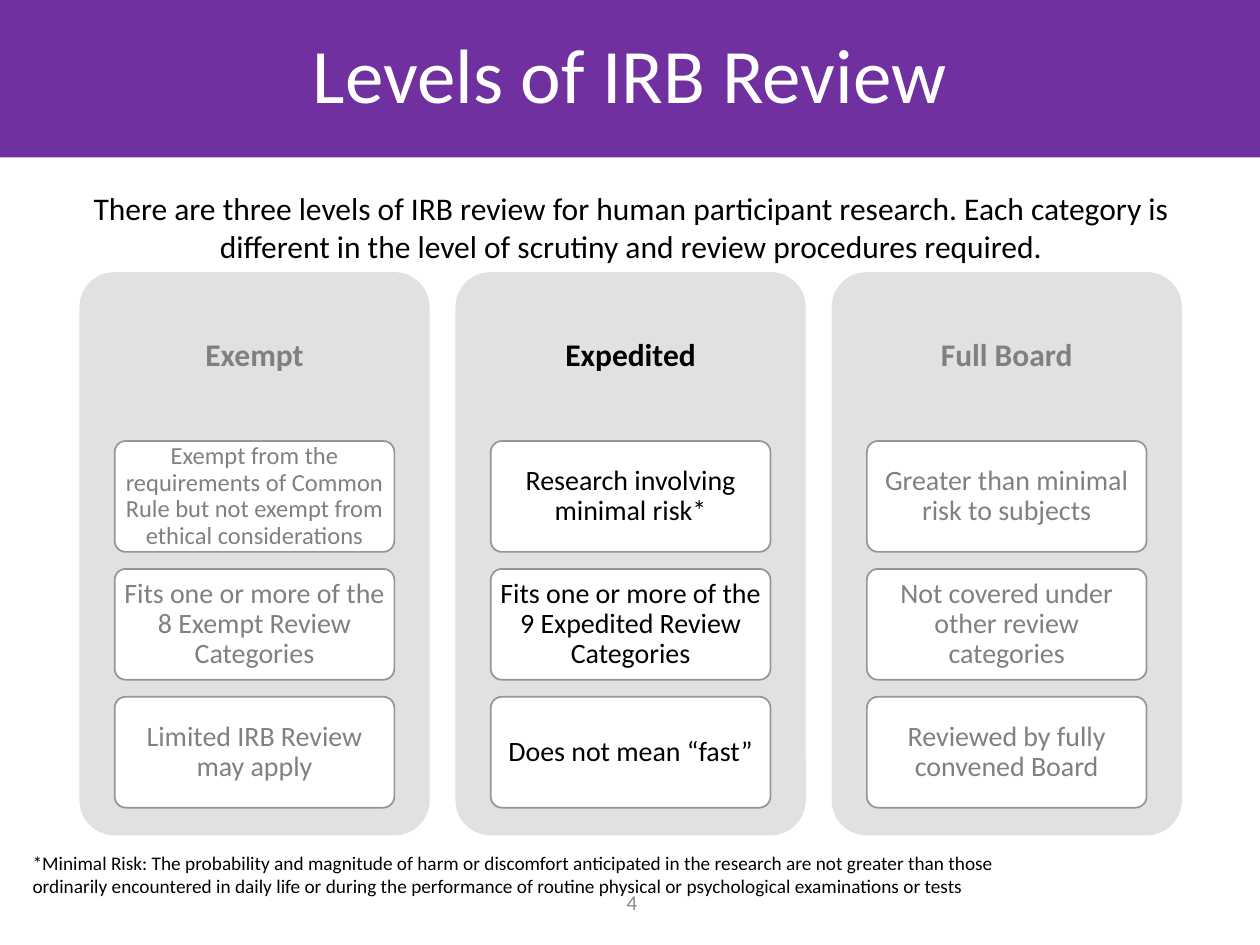
from pptx import Presentation
from pptx.dml.color import RGBColor
from pptx.enum.shapes import MSO_SHAPE
from pptx.enum.text import MSO_ANCHOR, PP_ALIGN
from pptx.util import Inches, Pt

ROUNDED = MSO_SHAPE.ROUNDED_RECTANGLE
LEFT, CENTER = PP_ALIGN.LEFT, PP_ALIGN.CENTER
TOP, MIDDLE = MSO_ANCHOR.TOP, MSO_ANCHOR.MIDDLE

FONT = "Calibri"
PURPLE, WHITE, BLACK = "7030A0", "FFFFFF", "000000"
PANEL_GRAY, OUTLINE_GRAY, MUTED, NUMBER_GRAY = "E1E1E1", "969696", "808080", "8C8C8C"

TITLE = "Levels of IRB Review"
INTRO = ("There are three levels of IRB review for human participant research. "
         "Each category is different in the level of scrutiny and review "
         "procedures required.")
FOOTNOTE = ("*Minimal Risk: The probability and magnitude of harm or discomfort "
            "anticipated in the research are not greater than those ordinarily "
            "encountered in daily life or during the performance of routine "
            "physical or psychological examinations or tests")
PAGE_NUMBER = "4"

# heading, text colour, cards as (text, size)
LEVELS = [
    ("Exempt", MUTED, [
        ("Exempt from the requirements of Common Rule but not exempt from "
         "ethical considerations", 14),
        ("Fits one or more of the 8 Exempt Review Categories", 16),
        ("Limited IRB Review may apply", 16)]),
    ("Expedited", BLACK, [
        ("Research involving minimal risk*", 16),
        ("Fits one or more of the 9 Expedited Review Categories", 16),
        ("Does not mean “fast”", 16)]),
    ("Full Board", MUTED, [
        ("Greater than minimal risk to subjects", 16),
        ("Not covered under other review categories", 16),
        ("Reviewed by fully convened Board", 16)]),
]

PANEL_LEFT, PANEL_TOP, PANEL_WIDTH, PANEL_HEIGHT = 0.63, 2.16, 2.78, 4.47
PANEL_STEP = 2.985
HEADING_HEIGHT = 1.34
CARD_WIDTH, CARD_HEIGHT, CARD_STEP = 2.22, 0.88, 1.015
CARD_INDENT = (PANEL_WIDTH - CARD_WIDTH) / 2


def color(value):
    return RGBColor.from_string(value)


def write(shape, text, size, text_color, align=CENTER, anchor=MIDDLE,
          bold=False, spacing=None, insets=(0.1, 0.05)):
    frame = shape.text_frame
    frame.word_wrap = True
    frame.vertical_anchor = anchor
    frame.margin_left = frame.margin_right = Inches(insets[0])
    frame.margin_top = frame.margin_bottom = Inches(insets[1])
    para = frame.paragraphs[0]
    para.alignment = align
    if spacing:
        para.line_spacing = spacing
    span = para.add_run()
    span.text = text
    span.font.name = FONT
    span.font.size = Pt(size)
    span.font.bold = bold
    span.font.color.rgb = color(text_color)


def add_text(page, area, *args, **options):
    box = page.shapes.add_textbox(*map(Inches, area))
    write(box, *args, **options)


def add_rounded(page, area, fill, outline=None):
    shape = page.shapes.add_shape(ROUNDED, *map(Inches, area))
    shape.adjustments[0] = 0.1
    shape.shadow.inherit = False
    shape.fill.solid()
    shape.fill.fore_color.rgb = color(fill)
    if outline:
        shape.line.color.rgb = color(outline)
        shape.line.width = Pt(1)
    else:
        shape.line.fill.background()
    return shape


def add_level(page, left, heading, text_color, cards):
    add_rounded(page, (left, PANEL_TOP, PANEL_WIDTH, PANEL_HEIGHT), PANEL_GRAY)
    add_text(page, (left, PANEL_TOP, PANEL_WIDTH, HEADING_HEIGHT), heading, 18,
             text_color, bold=True, spacing=0.9, insets=(0.07, 0.07))
    for row, (text, size) in enumerate(cards):
        top = PANEL_TOP + HEADING_HEIGHT + row * CARD_STEP
        card = add_rounded(page, (left + CARD_INDENT, top, CARD_WIDTH, CARD_HEIGHT),
                           WHITE, OUTLINE_GRAY)
        write(card, text, size, text_color, spacing=0.9, insets=(0.04, 0.03))


def main():
    deck = Presentation()
    deck.slide_width, deck.slide_height = Inches(10), Inches(7.5)
    page = deck.slides.add_slide(deck.slide_layouts[5])

    title = page.shapes.title
    title.left, title.top = Inches(0), Inches(0)
    title.width, title.height = Inches(10), Inches(1.25)
    title.fill.solid()
    title.fill.fore_color.rgb = color(PURPLE)
    write(title, TITLE, 44, WHITE, spacing=0.9)

    add_text(page, (4.68, 6.96, 0.67, 0.4), PAGE_NUMBER, 12, NUMBER_GRAY)
    add_text(page, (0.35, 1.45, 9.32, 0.71), INTRO, 18, BLACK, anchor=TOP)
    for column, level in enumerate(LEVELS):
        add_level(page, PANEL_LEFT + column * PANEL_STEP, *level)
    add_text(page, (0.16, 6.71, 7.92, 0.47), FOOTNOTE, 11, BLACK,
             align=LEFT, anchor=TOP)

    deck.save("out.pptx")


if __name__ == "__main__":
    main()
